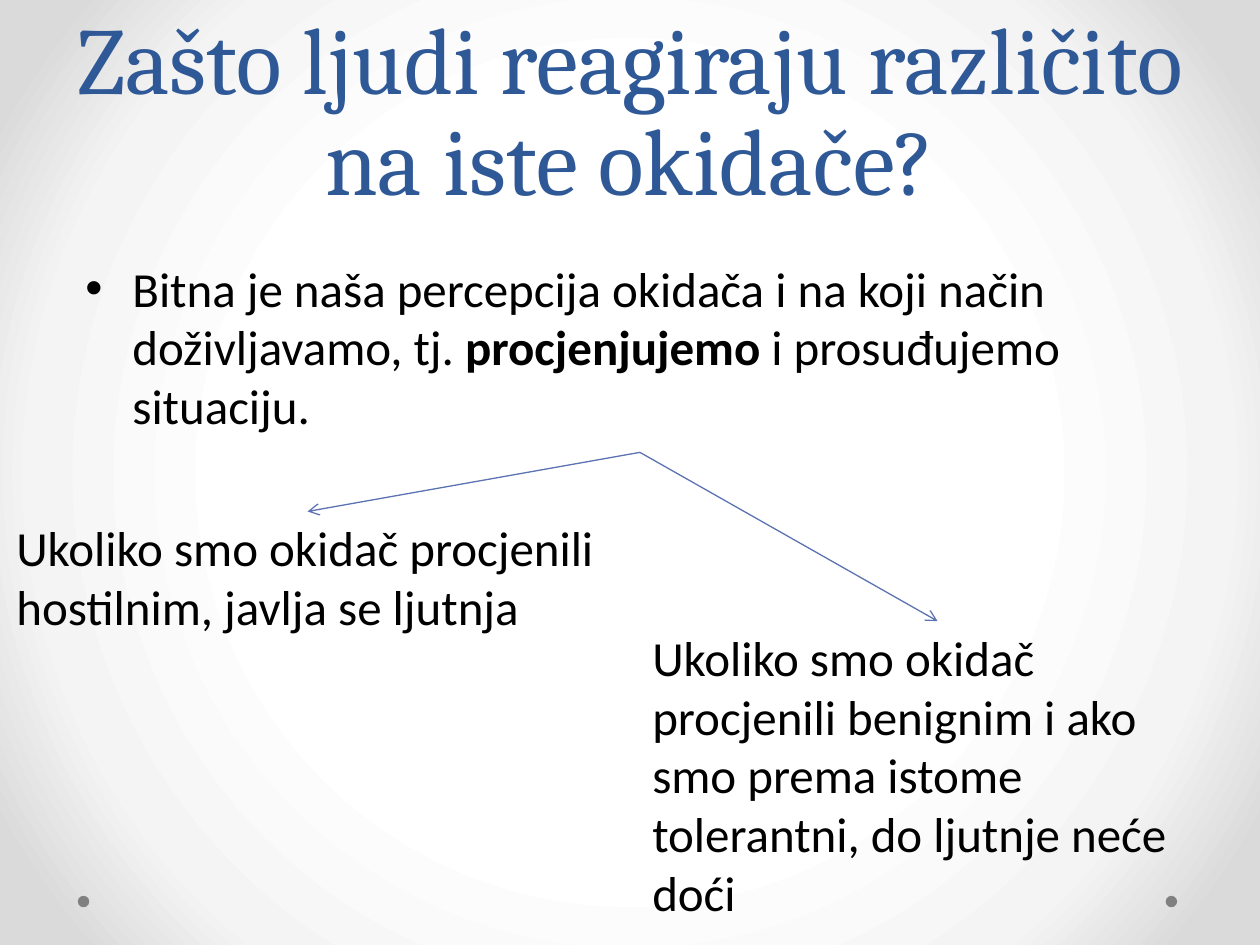
from lxml.etree import SubElement
from pptx import Presentation
from pptx.dml.color import RGBColor
from pptx.enum.shapes import MSO_CONNECTOR, MSO_SHAPE
from pptx.enum.text import MSO_ANCHOR, MSO_AUTO_SIZE, PP_ALIGN
from pptx.oxml.ns import qn
from pptx.util import Cm, Pt

BLUE = RGBColor(0x2F, 0x58, 0x97)
LINE_BLUE = RGBColor(0x5C, 0x72, 0xB2)
BLACK = RGBColor(0x00, 0x00, 0x00)
GRAY = RGBColor(0x80, 0x80, 0x80)
GLOW = [
    (50, RGBColor(0xFF, 0xFF, 0xFF)),
    (76, RGBColor(0xF4, 0xF4, 0xF4)),
    (92, RGBColor(0xDA, 0xDA, 0xDA)),
]


def set_background(s):
    """Fill the slide with a circular gradient that starts at its centre."""
    s.background.fill.gradient()
    grad = s._element.find(".//" + qn("a:gradFill"))
    for child in list(grad):
        grad.remove(child)
    stops = SubElement(grad, qn("a:gsLst"))
    for percent, color in GLOW:
        stop = SubElement(stops, qn("a:gs"), pos=str(percent * 1000))
        SubElement(stop, qn("a:srgbClr"), val=str(color))
    circle = SubElement(grad, qn("a:path"), path="circle")
    SubElement(circle, qn("a:fillToRect"),
               {side: "50000" for side in "ltrb"})


def add_dot(s, x):
    dot = s.shapes.add_shape(MSO_SHAPE.OVAL, Cm(x), Cm(18.06), Cm(0.23), Cm(0.23))
    dot.shadow.inherit = False
    dot.fill.solid()
    dot.fill.fore_color.rgb = GRAY
    dot.line.fill.background()


def add_text(s, x, y, w, h, runs, font="Calibri", size=28, color=BLACK):
    """Add a one-paragraph text box; runs are (text, bold) pairs."""
    tf = s.shapes.add_textbox(Cm(x), Cm(y), Cm(w), Cm(h)).text_frame
    tf.word_wrap = True
    p = tf.paragraphs[0]
    for text, bold in runs:
        r = p.add_run()
        r.text = text
        r.font.name = font
        r.font.size = Pt(size)
        r.font.bold = bold
        r.font.color.rgb = color
    return tf


def add_title(s, text):
    tf = add_text(s, 1.27, 0, 22.86, 4.45, [(text, False)], "Cambria", 54, BLUE)
    tf.vertical_anchor = MSO_ANCHOR.BOTTOM
    p = tf.paragraphs[0]
    p.alignment = PP_ALIGN.CENTER
    p.line_spacing = Pt(58)


def add_bullet(s, runs):
    tf = add_text(s, 1.47, 5.08, 22.86, 4.06, runs)
    pPr = tf.paragraphs[0]._p.get_or_add_pPr()
    indent = Cm(0.95)
    pPr.set("marL", str(indent))
    pPr.set("indent", str(-indent))
    SubElement(pPr, qn("a:buFont"), typeface="Arial")
    SubElement(pPr, qn("a:buChar"), char="•")


def add_outcome(s, x, y, w, h, text):
    tf = add_text(s, x, y, w, h, [(text, False)])
    tf.auto_size = MSO_AUTO_SIZE.SHAPE_TO_FIT_TEXT


def add_arrow(s, start, end):
    arrow = s.shapes.add_connector(
        MSO_CONNECTOR.STRAIGHT, *(Cm(v) for v in start + end))
    arrow.line.color.rgb = LINE_BLUE
    arrow.line.width = Pt(0.75)
    SubElement(arrow.line._get_or_add_ln(), qn("a:tailEnd"), type="arrow")
    SubElement(arrow._element.spPr, qn("a:effectLst"))


def main():
    prs = Presentation()
    prs.slide_width, prs.slide_height = Cm(25.4), Cm(19.05)
    s = prs.slides.add_slide(prs.slide_layouts[6])
    set_background(s)
    for x in (23.5, 1.57):
        add_dot(s, x)

    add_title(s, "Zašto ljudi reagiraju različito na iste okidače?")
    add_bullet(s, [
        ("Bitna je naša percepcija okidača i na koji način doživljavamo, tj. ", False),
        ("procjenjujemo ", True),
        ("i prosuđujemo situaciju.", False),
    ])
    add_outcome(s, 0.08, 10.31, 12.22, 2.64,
                "Ukoliko smo okidač procjenili hostilnim, javlja se ljutnja")
    add_outcome(s, 12.9, 12.52, 11.99, 6.25,
                "Ukoliko smo okidač procjenili benignim i ako smo prema istome "
                "tolerantni, do ljutnje neće doći")

    for end in ((6.2, 10.31), (18.9, 12.52)):
        add_arrow(s, (12.9, 9.12), end)
    prs.save("out.pptx")


if __name__ == "__main__":
    main()
